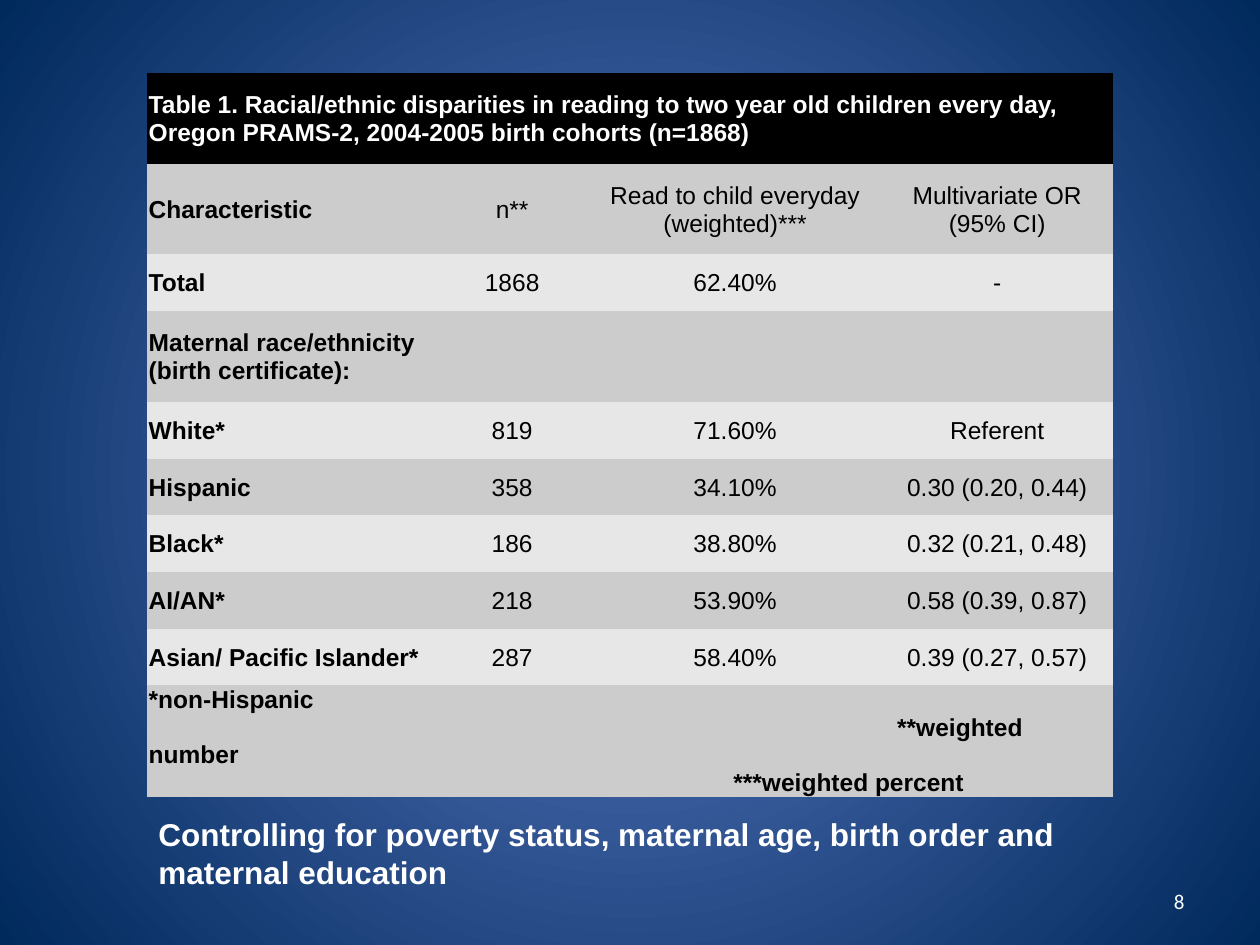
import lxml.etree
import pptx
import pptx.dml.color
import pptx.enum.text
import pptx.oxml
import pptx.oxml.ns
import pptx.util

Inches = pptx.util.Inches
Pt = pptx.util.Pt
RGBColor = pptx.dml.color.RGBColor
Align = pptx.enum.text.PP_ALIGN
Anchor = pptx.enum.text.MSO_ANCHOR

WHITE = RGBColor(0xFF, 0xFF, 0xFF)
BLACK = RGBColor(0x00, 0x00, 0x00)
DARK_BAND = RGBColor(0xCC, 0xCC, 0xCC)
LIGHT_BAND = RGBColor(0xE7, 0xE7, 0xE7)
GLOW_BLUE = RGBColor(0x5E, 0x7C, 0xC5)
NAVY = RGBColor(0x00, 0x29, 0x5C)

NO_GRID_STYLE = "{2D5ABB26-0587-4C30-8999-92F81FD0307C}"
COLUMN_WIDTHS = (2.29, 1.21, 2.33, 1.83)
TALL_ROW, SHORT_ROW, NOTE_ROW = 0.72, 0.45, 0.67

TABLE_TITLE = (
    "Table 1. Racial/ethnic disparities in reading to two year old children "
    "every day, Oregon PRAMS-2, 2004-2005 birth cohorts (n=1868)"
)
BODY_ROWS = (
    (TALL_ROW, ("Characteristic", "n**", "Read to child everyday (weighted)***",
                "Multivariate OR (95% CI)")),
    (SHORT_ROW, ("Total", "1868", "62.40%", "-")),
    (TALL_ROW, ("Maternal race/ethnicity (birth certificate):", "", "", "")),
    (SHORT_ROW, ("White*", "819", "71.60%", "Referent")),
    (SHORT_ROW, ("Hispanic", "358", "34.10%", "0.30 (0.20, 0.44)")),
    (SHORT_ROW, ("Black*", "186", "38.80%", "0.32 (0.21, 0.48)")),
    (SHORT_ROW, ("AI/AN*", "218", "53.90%", "0.58 (0.39, 0.87)")),
    (SHORT_ROW, ("Asian/ Pacific Islander*", "287", "58.40%", "0.39 (0.27, 0.57)")),
)
# Each footnote line with its indent in inches.
FOOTNOTES = (
    ("*non-Hispanic", 0),
    ("**weighted", 5.94),
    ("number", 0),
    ("***weighted percent", 4.64),
)


def set_radial_background(page, inner, outer):
    fill = page.background.fill
    fill.gradient()
    for stop, color, position in zip(fill.gradient_stops, (inner, outer), (0, 1)):
        stop.color.rgb = color
        stop.position = position
    gradient = page._element.find(".//" + pptx.oxml.ns.qn("a:gradFill"))
    linear = gradient.find(pptx.oxml.ns.qn("a:lin"))
    radial = pptx.oxml.parse_xml(
        f'<a:path {pptx.oxml.ns.nsdecls("a")} path="circle">'
        '<a:fillToRect l="50000" t="50000" r="50000" b="50000"/></a:path>'
    )
    gradient.replace(linear, radial)


def format_text(frame, font_name, size, color, bold=False, align=Align.LEFT):
    for para in frame.paragraphs:
        para.alignment = align
        for span in para.runs:
            span.font.name = font_name
            span.font.size = Pt(size)
            span.font.bold = bold
            span.font.color.rgb = color


def fill_cell(cell, text, fill, color=BLACK, bold=False, align=Align.LEFT):
    cell.fill.solid()
    cell.fill.fore_color.rgb = fill
    cell.vertical_anchor = Anchor.MIDDLE
    cell.margin_left = cell.margin_right = cell.margin_top = Inches(0.01)
    cell.margin_bottom = 0
    cell.text_frame.text = text
    format_text(cell.text_frame, "Arial", 14, color, bold, align)


def add_disparity_table(page, left, top, width, height):
    row_heights = [TALL_ROW, *(row_height for row_height, _ in BODY_ROWS), NOTE_ROW]
    table = page.shapes.add_table(
        len(row_heights), len(COLUMN_WIDTHS), left, top, width, height
    ).table
    table.first_row = table.horz_banding = False
    table._tbl.tblPr.find(pptx.oxml.ns.qn("a:tableStyleId")).text = NO_GRID_STYLE
    for column, column_width in zip(table.columns, COLUMN_WIDTHS):
        column.width = Inches(column_width)
    for row, row_height in zip(table.rows, row_heights):
        row.height = Inches(row_height)

    last_row, last_column = len(row_heights) - 1, len(COLUMN_WIDTHS) - 1
    for row_index in (0, last_row):
        table.cell(row_index, 0).merge(table.cell(row_index, last_column))
    fill_cell(table.cell(0, 0), TABLE_TITLE, BLACK, WHITE, bold=True)

    for row_index, (_, texts) in enumerate(BODY_ROWS, start=1):
        band = DARK_BAND if row_index % 2 else LIGHT_BAND
        for column_index, text in enumerate(texts):
            is_label = column_index == 0
            fill_cell(table.cell(row_index, column_index), text, band, bold=is_label,
                      align=Align.LEFT if is_label else Align.CENTER)

    note_cell = table.cell(last_row, 0)
    fill_cell(note_cell, "\n".join(text for text, _ in FOOTNOTES), DARK_BAND, bold=True)
    for para, (_, indent) in zip(note_cell.text_frame.paragraphs, FOOTNOTES):
        para._p.get_or_add_pPr().set("marL", str(Inches(indent)))


def add_caption(page, left, top, width, height):
    box = page.shapes.add_textbox(left, top, width, height)
    frame = box.text_frame
    frame.word_wrap = True
    frame.auto_size = pptx.enum.text.MSO_AUTO_SIZE.SHAPE_TO_FIT_TEXT
    frame.text = ("Controlling for poverty status, maternal age, birth order and "
                  "maternal education")
    format_text(frame, "Arial", 18, WHITE, bold=True)


def add_page_number(page, left, top, width, height):
    frame = page.shapes.add_textbox(left, top, width, height).text_frame
    frame.word_wrap = True
    frame.vertical_anchor = Anchor.MIDDLE
    frame.text = "8"
    format_text(frame, "Calibri", 12, WHITE, align=Align.RIGHT)


def main():
    deck = pptx.Presentation()
    deck.slide_width, deck.slide_height = Inches(10), Inches(7.5)
    page = deck.slides.add_slide(deck.slide_layouts[6])
    set_radial_background(page, GLOW_BLUE, NAVY)
    add_disparity_table(page, Inches(1.17), Inches(0.58), Inches(7.67), Inches(5.54))
    add_page_number(page, Inches(7.17), Inches(6.95), Inches(2.33), Inches(0.4))
    add_caption(page, Inches(1.16), Inches(6.42), Inches(7.67), Inches(0.71))
    deck.save("out.pptx")


if __name__ == "__main__":
    main()
